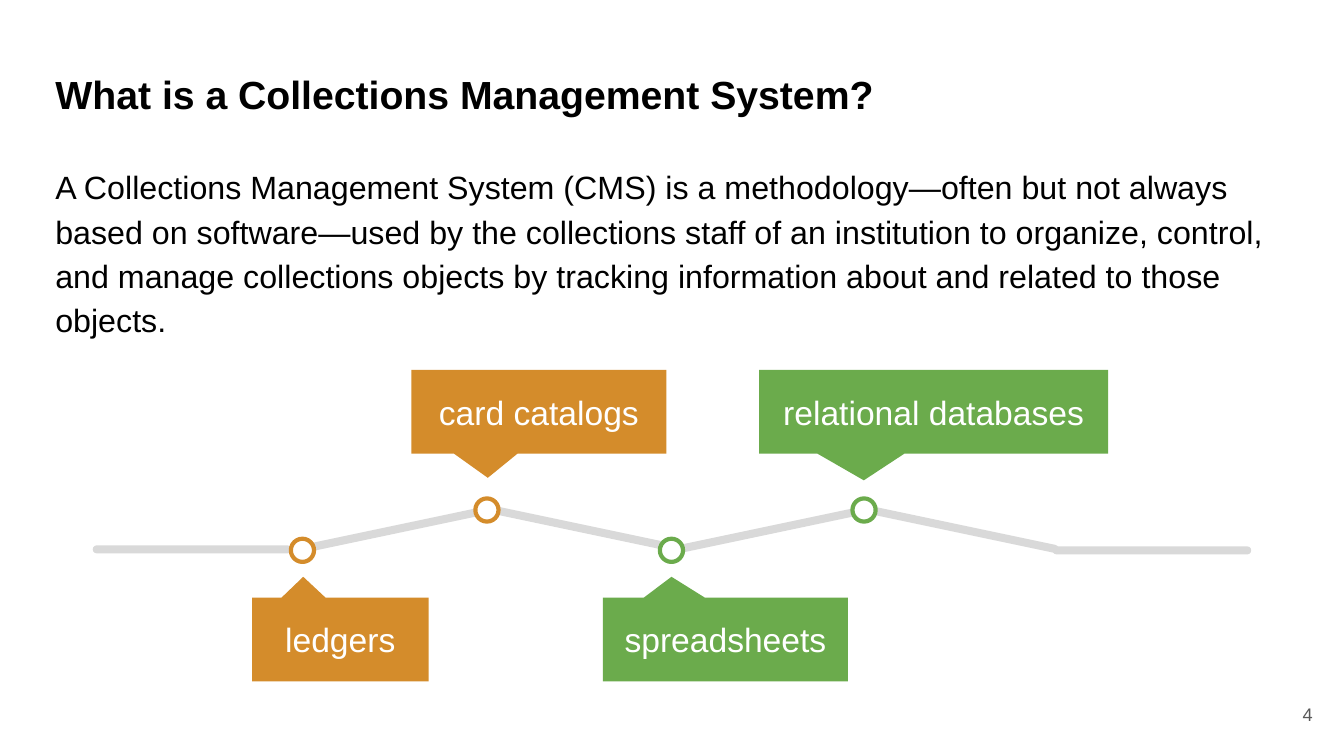
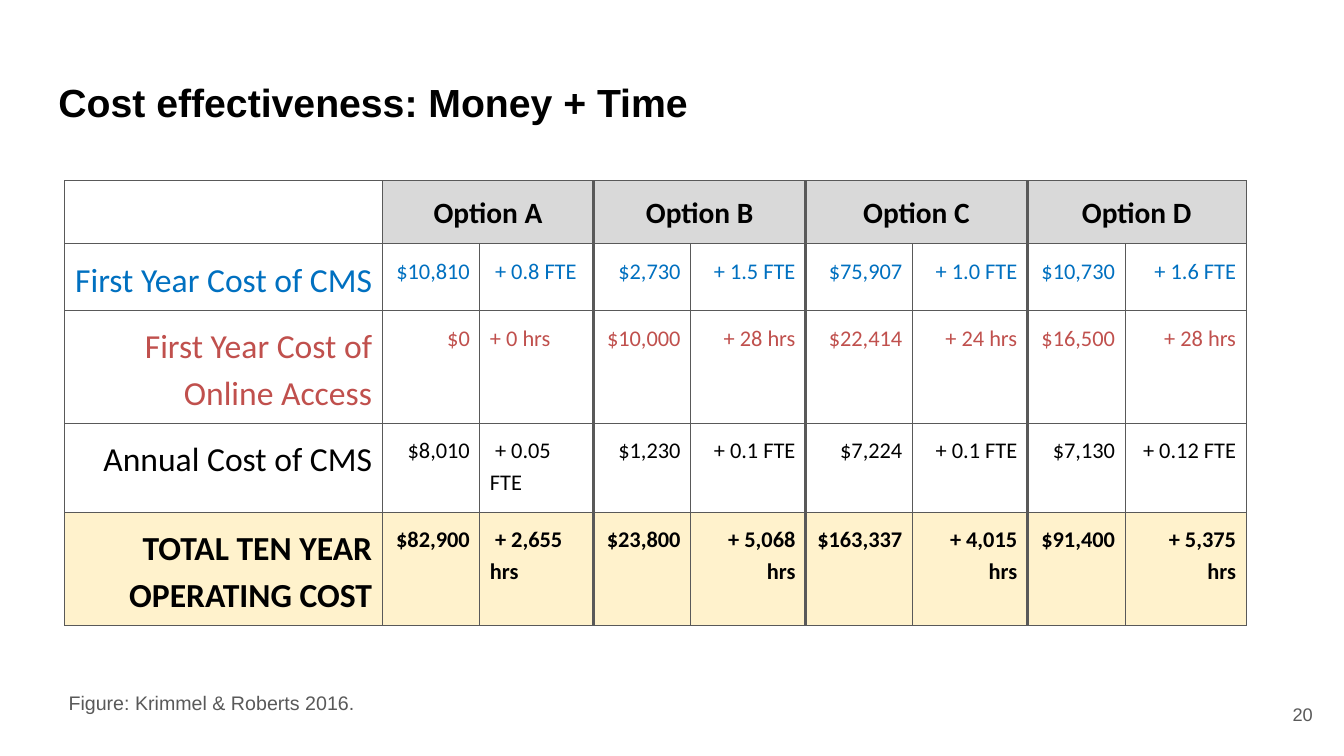
from lxml.etree import SubElement
from pptx import Presentation
from pptx.dml.color import RGBColor
from pptx.enum.shapes import MSO_SHAPE as Shape
from pptx.enum.text import MSO_ANCHOR as Anchor, PP_ALIGN as Align
from pptx.oxml.ns import qn
from pptx.util import Inches, Pt

COLORS = {
    "black": "000000", "white": "FFFFFF", "gray": "595959", "track": "D9D9D9",
    "orange": "D48C2B", "green": "6BAB4C", "blue": "0070C0", "red": "C0504D",
    "cream": "FFF2CC",
}

# Content: definition and timeline
DEFINITION = (
    "A Collections Management System (CMS) is a methodology—often but not always "
    "based on software—used by the collections staff of an institution to organize, "
    "control, and manage collections objects by tracking information about and "
    "related to those objects."
)
# Left edge, vertical centre and tilt of each stretch of the track
TRACK = [(0.92, 5.45, 0), (2.95, 5.25, -11.9), (4.82, 5.25, 11.9),
         (6.69, 5.25, -11.9), (8.55, 5.25, 11.9), (10.44, 5.46, 0)]
TRACK_LENGTH, TRACK_THICKNESS = 1.97, 0.08
RING = 0.23
CALLOUT_HEIGHT = 0.83
# Label, colour, ring centre, callout left, top and width, pointer tip
MILESTONES = [
    ("ledgers", "orange", (3, 5.46), (2.5, 5.93, 1.75), (-0.21, -0.75)),
    ("card catalogs", "orange", (4.83, 5.06), (4.08, 3.67, 2.53), (-0.2, 0.79)),
    ("spreadsheets", "green", (6.66, 5.46), (5.98, 5.93, 2.43), (-0.22, -0.75)),
    ("relational databases", "green", (8.57, 5.06), (7.53, 3.67, 3.46), (-0.2, 0.82)),
]

# Content: cost table
OPTIONS = ["Option A", "Option B", "Option C", "Option D"]
# Label, text colour, bold, fill, then money and time per option
COSTS = [
    ("First Year Cost of CMS", "blue", False, None,
     ["$10,810", " + 0.8 FTE", "$2,730", " + 1.5 FTE",
      "$75,907", " + 1.0 FTE", "$10,730", " + 1.6 FTE"]),
    ("First Year Cost of Online Access", "red", False, None,
     ["$0", "+ 0 hrs", "$10,000", " + 28 hrs",
      "$22,414", " + 24 hrs", "$16,500", " + 28 hrs"]),
    ("Annual Cost of CMS", "black", False, None,
     ["$8,010", " + 0.05 FTE", "$1,230", " + 0.1 FTE",
      "$7,224", " + 0.1 FTE", "$7,130", " + 0.12 FTE"]),
    ("TOTAL TEN YEAR\nOPERATING COST", "black", True, "cream",
     ["$82,900", " + 2,655 hrs", "$23,800", " + 5,068 hrs",
      "$163,337", " + 4,015 hrs", "$91,400", " + 5,375 hrs"]),
]
COLUMN_WIDTHS = [3.15, 0.97, 1.13, 0.96, 1.14, 1.06, 1.14, 0.97, 1.2]
ROW_HEIGHTS = [0.63, 0.63, 0.99, 0.88, 0.99]
GROUP_ENDS = (2, 4, 6)
THIN, THICK = 0.75, 2.25


def rgb(name):
    return RGBColor.from_string(COLORS[name])


def write(frame, text, size, color="black", font="Arial", bold=False,
          align=Align.LEFT, spacing=1.0, after=0):
    """Fill a text frame, one paragraph per line of text."""
    for index, line in enumerate(text.split("\n")):
        paragraph = frame.add_paragraph() if index else frame.paragraphs[0]
        paragraph.alignment = align
        paragraph.line_spacing = spacing
        paragraph.space_before = Pt(0)
        paragraph.space_after = Pt(after)
        run = paragraph.add_run()
        run.text = line
        run.font.size = Pt(size)
        run.font.name = font
        run.font.bold = bold
        run.font.color.rgb = rgb(color)


def set_frame(frame, side, top, anchor):
    frame.word_wrap = True
    frame.margin_left = frame.margin_right = Inches(side)
    frame.margin_top = frame.margin_bottom = Inches(top)
    frame.vertical_anchor = anchor
    return frame


def add_text(slide, box, text, size, inset=(0.13, 0.13), **text_format):
    area = slide.shapes.add_textbox(*map(Inches, box))
    write(set_frame(area.text_frame, *inset, Anchor.MIDDLE), text, size, **text_format)


def add_slide(deck, heading, number, inset):
    slide = deck.slides.add_slide(deck.slide_layouts[5])
    title = slide.shapes.title
    title.left, title.top, title.width, title.height = map(Inches, (0.45, 0.65, 12.42, 0.83))
    write(set_frame(title.text_frame, *inset, Anchor.TOP), heading, 28, bold=True)
    add_text(slide, (12.35, 6.8, 0.8, 0.57), number, 13, color="gray", align=Align.RIGHT)
    return slide


def add_block(slide, kind, box, fill, outline=None):
    block = slide.shapes.add_shape(kind, *map(Inches, box))
    block.shadow.inherit = False
    block.fill.solid()
    block.fill.fore_color.rgb = rgb(fill)
    if outline:
        block.line.color.rgb = rgb(outline)
        block.line.width = Pt(3)
    else:
        block.line.fill.background()
    return block


def add_timeline(slide):
    for left, middle, tilt in TRACK:
        stretch = add_block(
            slide, Shape.ROUNDED_RECTANGLE,
            (left, middle - TRACK_THICKNESS / 2, TRACK_LENGTH, TRACK_THICKNESS), "track")
        stretch.adjustments[0] = 0.5
        stretch.rotation = tilt
    for label, color, (x, y), (left, top, width), tip in MILESTONES:
        add_block(slide, Shape.OVAL, (x - RING / 2, y - RING / 2, RING, RING),
                  "white", outline=color)
        callout = add_block(slide, Shape.ROUNDED_RECTANGULAR_CALLOUT,
                            (left, top, width, CALLOUT_HEIGHT), color)
        for index, value in enumerate((*tip, 0)):
            callout.adjustments[index] = value
        write(set_frame(callout.text_frame, 0.1, 0.1, Anchor.MIDDLE),
              label, 24, color="white", align=Align.CENTER)


def style_cell(cell, column, fill):
    """Borders come first: the schema wants them ahead of the fill."""
    cell.margin_left = cell.margin_right = Inches(0.1)
    cell.margin_top = cell.margin_bottom = Inches(0.1)
    properties = cell._tc.get_or_add_tcPr()
    widths = {"lnL": THICK if column - 1 in GROUP_ENDS else THIN,
              "lnR": THICK if column in GROUP_ENDS else THIN,
              "lnT": THIN, "lnB": THIN}
    for side, width in widths.items():
        border = SubElement(properties, qn(f"a:{side}"), w=str(Pt(width)))
        paint = SubElement(border, qn("a:solidFill"))
        SubElement(paint, qn("a:srgbClr"), val=COLORS["gray"])
    if fill:
        cell.fill.solid()
        cell.fill.fore_color.rgb = rgb(fill)
    else:
        cell.fill.background()


def add_cost_table(slide):
    costs = slide.shapes.add_table(
        len(ROW_HEIGHTS), len(COLUMN_WIDTHS), Inches(0.64), Inches(1.79),
        Inches(sum(COLUMN_WIDTHS)), Inches(sum(ROW_HEIGHTS))).table
    costs.first_row = costs.horz_banding = False
    for column, width in zip(costs.columns, COLUMN_WIDTHS):
        column.width = Inches(width)
    for row, height in zip(costs.rows, ROW_HEIGHTS):
        row.height = Inches(height)

    # Header: each option spans its money and time columns
    for column in range(len(COLUMN_WIDTHS)):
        style_cell(costs.cell(0, column), column, "track" if column else None)
    for index, option in enumerate(OPTIONS):
        header = costs.cell(0, 2 * index + 1)
        header.merge(costs.cell(0, 2 * index + 2))
        write(header.text_frame, option, 21, font="Calibri", bold=True,
              align=Align.CENTER, spacing=1.15)

    # Body: the time column of the first option reads from the left
    for row, (label, color, bold, fill, values) in enumerate(COSTS, 1):
        for column, text in enumerate([label, *values]):
            cell = costs.cell(row, column)
            style_cell(cell, column, fill)
            write(cell.text_frame, text, 16 if column else 24, color=color,
                  font="Calibri", bold=bold, spacing=1.15,
                  align=Align.LEFT if column == 2 else Align.RIGHT)


def main():
    deck = Presentation()
    deck.slide_width, deck.slide_height = Inches(13.33), Inches(7.5)

    # Definition
    definition = add_slide(deck, "What is a Collections Management System?", "4", (0.1, 0.05))
    add_text(definition, (0.45, 1.32, 12.42, 2.33), DEFINITION, 23,
             inset=(0.1, 0.05), spacing=1.15, after=16)
    add_timeline(definition)

    # Costs
    cost = add_slide(deck, "Cost effectiveness: Money + Time", "20", (0.13, 0.13))
    add_cost_table(cost)
    add_text(cost, (0.55, 6.73, 11.72, 0.44), "Figure: Krimmel & Roberts 2016.", 14,
             color="gray", spacing=1.15, after=16)

    deck.save("out.pptx")


if __name__ == "__main__":
    main()
